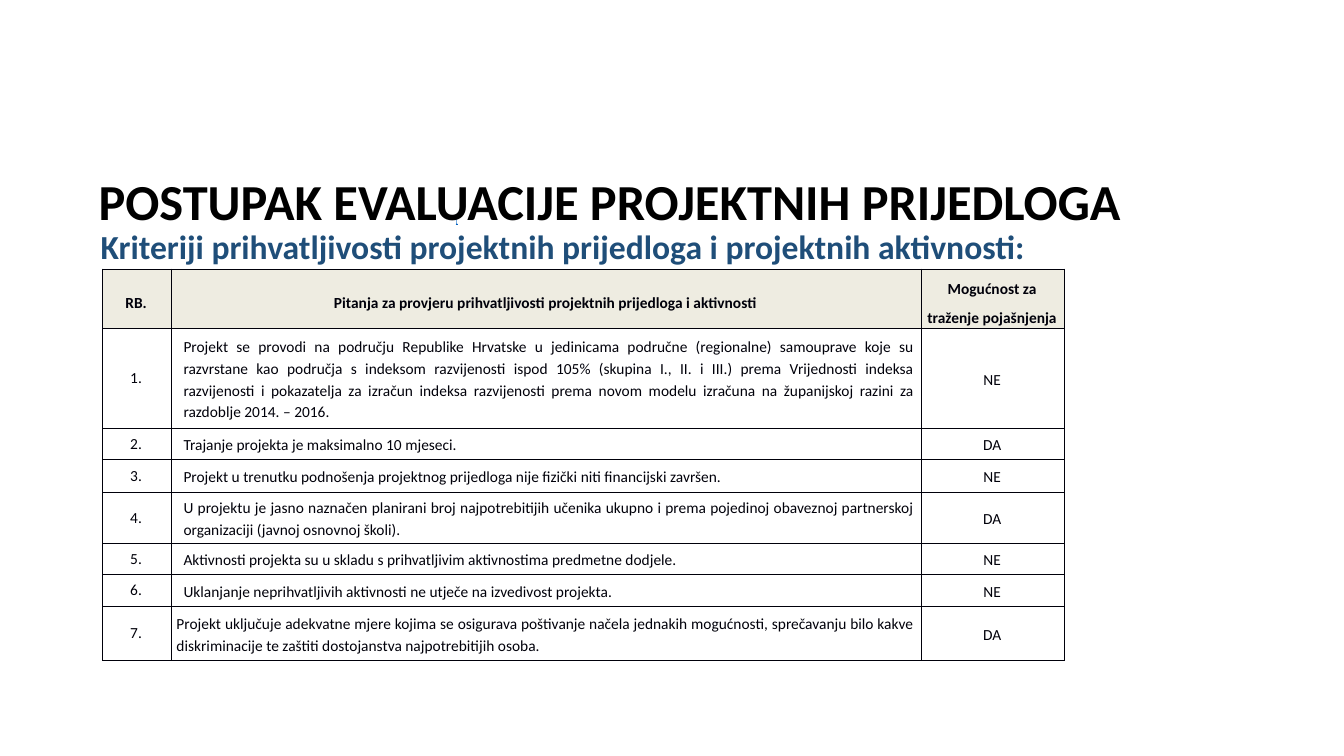
from pptx import Presentation
from pptx.dml.color import RGBColor
from pptx.enum.text import MSO_ANCHOR, PP_ALIGN
from pptx.oxml import parse_xml
from pptx.oxml.ns import nsdecls
from pptx.util import Inches, Pt

MIDDLE = MSO_ANCHOR.MIDDLE
LEFT, CENTER, JUSTIFY = PP_ALIGN.LEFT, PP_ALIGN.CENTER, PP_ALIGN.JUSTIFY

INK, HEADER_FILL, WHITE = "00000A", "EEECE1", "FFFFFF"
COL_WIDTHS = [0.68, 7.44, 1.42]
ROW_HEIGHTS = [0.59, 0.99, 0.31, 0.33, 0.5, 0.31, 0.32, 0.53]
HEADERS = [
    "RB.",
    "Pitanja za provjeru prihvatljivosti projektnih prijedloga i aktivnosti",
    "Mogućnost za traženje pojašnjenja",
]
CRITERIA = [
    ("Projekt se provodi na području Republike Hrvatske u jedinicama područne (regionalne) "
     "samouprave koje su razvrstane kao područja s indeksom razvijenosti ispod 105% "
     "(skupina I., II. i III.) prema Vrijednosti indeksa razvijenosti i pokazatelja za izračun "
     "indeksa razvijenosti prema novom modelu izračuna na županijskoj razini za razdoblje "
     "2014. – 2016.", "NE"),
    ("Trajanje projekta je maksimalno 10 mjeseci.", "DA"),
    ("Projekt u trenutku podnošenja projektnog prijedloga nije fizički niti financijski "
     "završen.", "NE"),
    ("U projektu je jasno naznačen planirani broj najpotrebitijih učenika ukupno i prema "
     "pojedinoj obaveznoj partnerskoj organizaciji (javnoj osnovnoj školi).", "DA"),
    ("Aktivnosti projekta su u skladu s prihvatljivim aktivnostima predmetne dodjele.", "NE"),
    ("Uklanjanje neprihvatljivih aktivnosti ne utječe na izvedivost projekta.", "NE"),
    ("Projekt uključuje adekvatne mjere kojima se osigurava poštivanje načela jednakih "
     "mogućnosti, sprečavanju bilo kakve diskriminacije te zaštiti dostojanstva "
     "najpotrebitijih osoba.", "DA"),
]


def rgb(color):
    return RGBColor.from_string(color)


def write(tf, text, color, align=LEFT, spacing=1.0, **font):
    """Put one formatted run into a text frame and return it."""
    p = tf.paragraphs[0]
    p.alignment, p.line_spacing = align, spacing
    r = p.add_run()
    r.text = text
    r.font.color.rgb = rgb(color)
    for name, value in {"name": "Calibri", **font}.items():
        setattr(r.font, name, value)
    return r


prs = Presentation()
prs.slide_width, prs.slide_height = Inches(13.33), Inches(7.5)
s = prs.slides.add_slide(prs.slide_layouts[6])

# Headings and the small reference mark
headings = [
    ((1.0 - 0.1, 2.21, 11.5, 0.52), "Kriteriji prihvatljivosti projektnih prijedloga i projektnih aktivnosti:",
     "1F4E79", {"size": Pt(24), "bold": True, "spacing": 0.9}, True),
    ((4.42, 2.08, 0.23, 0.25), "[", "0563C1", {"size": Pt(9), "underline": True}, False),
    ((0.88, 1.58, 11.5, 0.9), "POSTUPAK EVALUACIJE PROJEKTNIH PRIJEDLOGA",
     "000000", {"size": Pt(36), "bold": True, "spacing": 0.9}, True),
]
for box, text, color, style, wrap in headings:
    tf = s.shapes.add_textbox(*map(Inches, box)).text_frame
    tf.word_wrap, tf.vertical_anchor = wrap, MIDDLE
    r = write(tf, text, color, **style)
    if text == "[":
        r.font._element.set("baseline", "30000")

# Criteria table
table = s.shapes.add_table(
    len(ROW_HEIGHTS), len(COL_WIDTHS), Inches(1.02), Inches(2.67),
    Inches(sum(COL_WIDTHS)), Inches(sum(ROW_HEIGHTS))).table
table.horz_banding = False
for column, width in zip(table.columns, COL_WIDTHS):
    column.width = Inches(width)
for row, height in zip(table.rows, ROW_HEIGHTS):
    row.height = Inches(height)

rows = [HEADERS] + [(f"{n}.", *c) for n, c in enumerate(CRITERIA, 1)]
for i, texts in enumerate(rows):
    header = i == 0
    for j, text in enumerate(texts):
        cell = table.cell(i, j)
        tight = header or j == 0
        cell.margin_left = Inches(0.04 if tight else 0.05)
        cell.margin_right = Inches(0.06 if tight else 0.07)
        cell.margin_top = cell.margin_bottom = 0
        cell.vertical_anchor = MIDDLE
        tcPr = cell._tc.get_or_add_tcPr()
        for side in "LRTB":
            tcPr.append(parse_xml(
                f'<a:ln{side} {nsdecls("a")} w="{Pt(1)}"><a:solidFill>'
                f'<a:srgbClr val="{INK}"/></a:solidFill></a:ln{side}>'))
        cell.fill.solid()
        cell.fill.fore_color.rgb = rgb(HEADER_FILL if header else WHITE)

        question = j == 1 and not header
        write(cell.text_frame, text, INK, JUSTIFY if question else CENTER,
              1.5 if header else 1.0 if j == 0 else 1.15, size=Pt(11), bold=header)
        if question and i < len(CRITERIA):
            pPr = cell.text_frame.paragraphs[0]._p.get_or_add_pPr()
            pPr.set("marL", str(Inches(0.07)))

prs.save("out.pptx")
